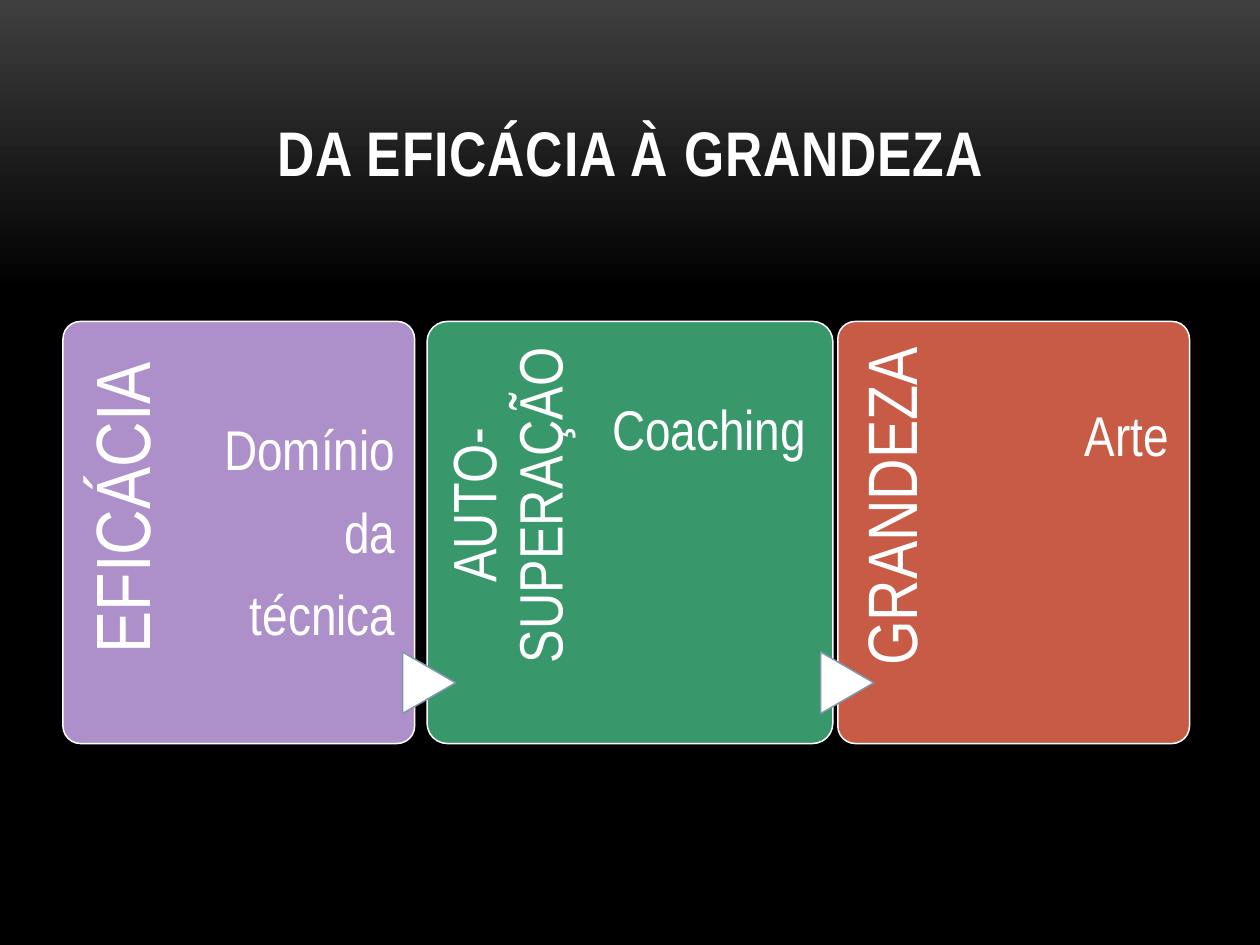
from pptx import Presentation
from pptx.dml.color import RGBColor
from pptx.enum.shapes import MSO_SHAPE
from pptx.enum.text import MSO_ANCHOR, PP_ALIGN
from pptx.util import Cm, Pt

FONT = "Arial Narrow"
COLORS = {
    "white": "FFFFFF", "black": "000000", "charcoal": "3F3F3F",
    "purple": "AD90CA", "green": "39976C", "red": "C75B45", "steel": "7E97AD",
}

TITLE = "DA EFICÁCIA À GRANDEZA"
# Lengths in cm; label insets are top and right
STAGES = [
    {"label": "EFICÁCIA", "size": 44, "insets": (0.43, 0.53), "color": "purple",
     "left": 1.27, "width": 7.09, "details": ["Domínio", "da", "técnica"],
     "details_left": 2.69, "details_inset": 2.03, "arrow_left": None},
    {"label": "AUTO-SUPERAÇÃO", "size": 35, "insets": (0.33, 0.43), "color": "green",
     "left": 8.61, "width": 8.18, "details": ["Coaching"],
     "details_left": 10.16, "details_inset": 2.03, "arrow_left": 8.03},
    {"label": "GRANDEZA", "size": 40, "insets": (0.38, 0.48), "color": "red",
     "left": 16.89, "width": 7.09, "details": ["Arte"],
     "details_left": 18.29, "details_inset": 2.29, "arrow_left": 16.46},
]
CARD_TOP, CARD_HEIGHT = 6.48, 8.51
LABEL_SHARE, LABEL_LENGTH_SHARE, DETAILS_SHARE = 0.2, 0.82, 0.745
ARROW_TOP, ARROW_WIDTH, ARROW_HEIGHT = 13.23, 1.24, 1.07


def rgb(name):
    return RGBColor.from_string(COLORS[name])


def add_panel(slide, kind, box, fill, line):
    panel = slide.shapes.add_shape(kind, *map(Cm, box))
    panel.shadow.inherit = False
    panel.fill.solid()
    panel.fill.fore_color.rgb = rgb(fill)
    panel.line.color.rgb = rgb(line)
    panel.line.width = Pt(0.85)
    return panel


def add_text(slide, box, lines, size, align, insets, spacing=0.9):
    """Add a text box; insets are left, top, right, bottom in cm."""
    holder = slide.shapes.add_textbox(*map(Cm, box))
    frame = holder.text_frame
    frame.word_wrap = True
    (frame.margin_left, frame.margin_top,
     frame.margin_right, frame.margin_bottom) = map(Cm, insets)
    frame.text = "\n".join(lines)
    for paragraph in frame.paragraphs:
        paragraph.alignment = align
        paragraph.line_spacing = spacing
        paragraph.space_after = Pt(12.6 if len(lines) > 1 else 0)
        for run in paragraph.runs:
            run.font.name = FONT
            run.font.size = Pt(size)
            run.font.color.rgb = rgb("white")
    return holder


def add_background(slide):
    fill = slide.background.fill
    fill.gradient()
    fill.gradient_angle = 270
    for stop, color, position in zip(fill.gradient_stops,
                                     ("charcoal", "black"), (0, 0.31)):
        stop.color.rgb = rgb(color)
        stop.position = position


def add_title(slide):
    title = add_text(slide, (1.7, 0.76, 22.02, 3.18), [TITLE], 36,
                     PP_ALIGN.CENTER, (0.25, 0.13, 0.25, 0.13), 1.0)
    title.text_frame.vertical_anchor = MSO_ANCHOR.BOTTOM
    run = title.text_frame.paragraphs[0].runs[0]
    run.font.bold = True
    run.font._element.set("spc", "50")


def add_stage(slide, stage):
    left, width = stage["left"], stage["width"]
    card = add_panel(slide, MSO_SHAPE.ROUNDED_RECTANGLE,
                     (left, CARD_TOP, width, CARD_HEIGHT), stage["color"], "white")
    card.adjustments[0] = 0.05

    # The label fills a strip on the left, turned to read upwards
    length, thickness = CARD_HEIGHT * LABEL_LENGTH_SHARE, width * LABEL_SHARE
    label_box = (left + (thickness - length) / 2,
                 CARD_TOP + (length - thickness) / 2, length, thickness)
    top_inset, right_inset = stage["insets"]
    label = add_text(slide, label_box, [stage["label"]], stage["size"],
                     PP_ALIGN.CENTER, (0, top_inset, right_inset, 0))
    label.rotation = 270

    if stage["arrow_left"] is not None:
        arrow = add_panel(slide, MSO_SHAPE.FLOWCHART_EXTRACT,
                          (stage["arrow_left"], ARROW_TOP, ARROW_WIDTH, ARROW_HEIGHT),
                          "white", "steel")
        arrow.rotation = 90

    add_text(slide, (stage["details_left"], CARD_TOP, width * DETAILS_SHARE, CARD_HEIGHT),
             stage["details"], 32, PP_ALIGN.RIGHT, (0, stage["details_inset"], 0, 0))


def main():
    deck = Presentation()
    deck.slide_width, deck.slide_height = Cm(25.4), Cm(19.05)
    slide = deck.slides.add_slide(deck.slide_layouts[6])
    add_background(slide)
    add_title(slide)
    for stage in STAGES:
        add_stage(slide, stage)
    deck.save("out.pptx")


if __name__ == "__main__":
    main()
